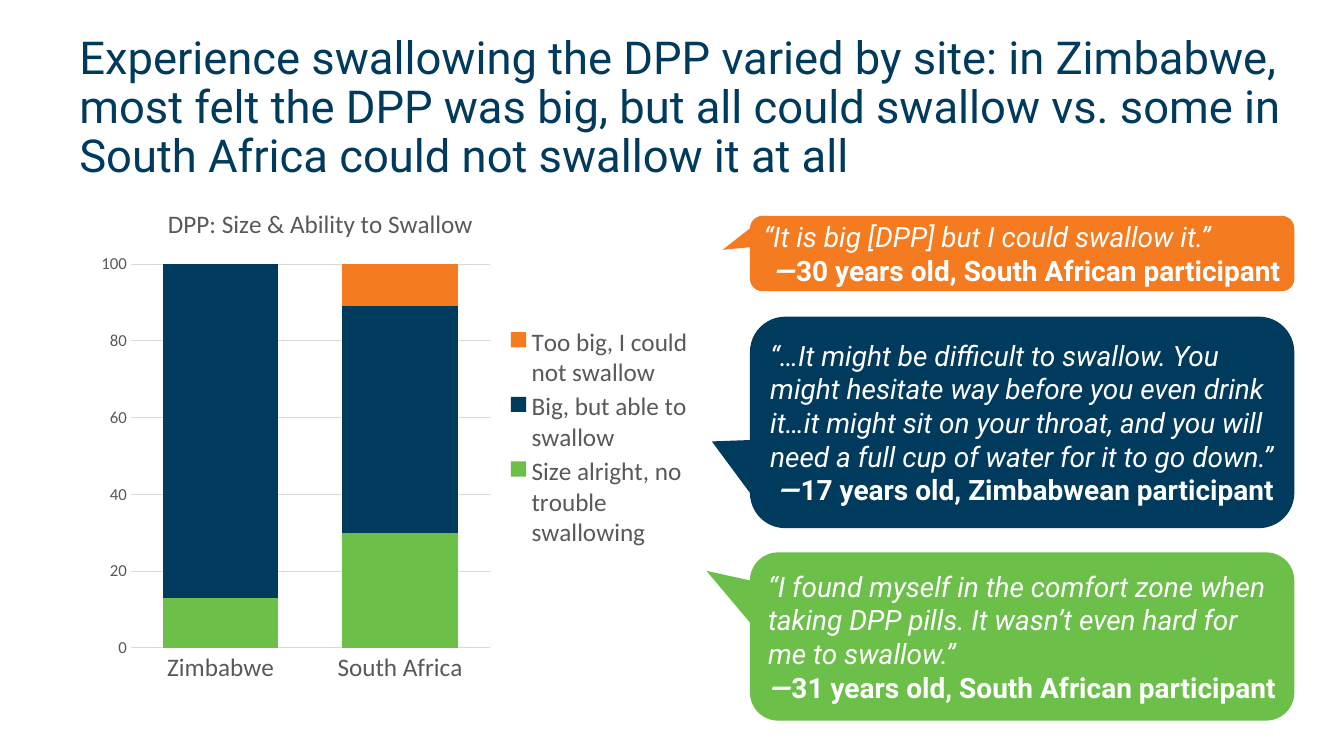
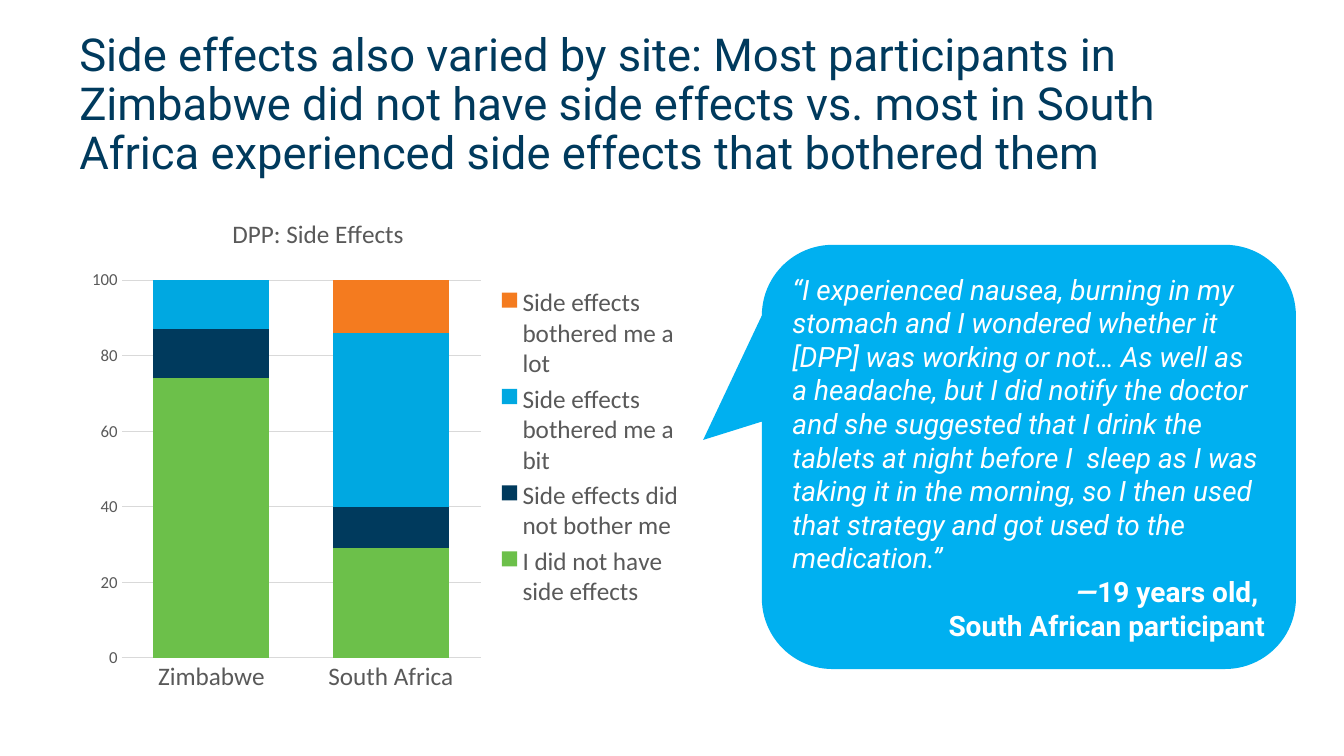
from lxml import etree
from pptx import Presentation
from pptx.chart.data import CategoryChartData
from pptx.dml.color import RGBColor
from pptx.enum.chart import XL_CHART_TYPE, XL_LEGEND_POSITION, XL_TICK_MARK
from pptx.enum.shapes import MSO_SHAPE
from pptx.enum.text import MSO_ANCHOR, PP_ALIGN
from pptx.oxml.ns import qn
from pptx.util import Cm, Pt

STACKED = XL_CHART_TYPE.COLUMN_STACKED
RIGHT = XL_LEGEND_POSITION.RIGHT
NO_TICK = XL_TICK_MARK.NONE
CALLOUT = MSO_SHAPE.ROUNDED_RECTANGULAR_CALLOUT
MIDDLE = MSO_ANCHOR.MIDDLE

# Shared look
NAVY, ORANGE, GREEN = "003A5D", "F47B1F", "6CC04A"
BLUE, SKY, WHITE = "00A8E1", "00B0F0", "FFFFFF"
GRAY, RULE = "595959", "D9D9D9"
HEAD = {"name": "Roboto", "size": Pt(32.4), "color": NAVY}
QUOTE = {"name": "Roboto", "size": Pt(20), "color": WHITE, "italic": True}
DASH = {**QUOTE, "bold": True}
SOURCE = {**DASH, "italic": False}
LABEL = {"name": "Calibri", "size": Pt(18), "color": GRAY, "bold": False}
SCALE = {**LABEL, "size": Pt(12)}
SITES = ["Zimbabwe", "South Africa"]
CHART_SIZE = (15.47, 12.78)

# Content: boxes in cm, chart parts as fractions of the chart
SLIDES = [
    {
        "title": "Experience swallowing the DPP varied by site: in Zimbabwe, "
                 "most felt the DPP was big, but all could swallow vs. some in "
                 "South Africa could not swallow it at all",
        "box": (1.75, 0.76, 30.86, 3.94),
        "chart": "DPP: Size & Ability to Swallow",
        "at": (2.26, 4.7),
        "parts": {"title": (0.12, 0.03),
                  "plotArea": (0.067, 0.153, 0.585, 0.757),
                  "legend": (0.68, 0.27, 0.3, 0.45)},
        "series": [
            ("Size alright, no trouble swallowing", (13, 30), GREEN),
            ("Big, but able to swallow", (87, 59), NAVY),
            ("Too big, I could not swallow", (0, 11), ORANGE),
        ],
        "quotes": [
            ("“…It might be difficult to swallow. You might hesitate way "
             "before you even drink it…it might sit on your throat, and you "
             "will need a full cup of water for it to go down.”",
             ["17 years old, Zimbabwean participant"],
             (18.9, 7.98, 13.72, 5.33), (-0.57, 0.09), NAVY),
            ("“It is big [DPP] but I could swallow it.”",
             ["30 years old, South African participant"],
             (18.9, 5.44, 13.72, 1.9), (-0.55, -0.05), ORANGE),
            ("“I found myself in the comfort zone when taking DPP pills. "
             "It wasn’t even hard for me to swallow.”",
             ["31 years old, South African participant"],
             (18.9, 13.92, 13.72, 4.24), (-0.58, -0.39), GREEN),
        ],
    },
    {
        "title": "Side effects also varied by site: Most participants in "
                 "Zimbabwe did not have side effects vs. most in South Africa "
                 "experienced side effects that bothered them",
        "box": (1.75, 0.69, 29.95, 3.94),
        "chart": "DPP: Side Effects",
        "at": (2.03, 4.95),
        "parts": {"title": (0.24, 0.03),
                  "plotArea": (0.067, 0.165, 0.585, 0.745),
                  "legend": (0.68, 0.17, 0.3, 0.65)},
        "series": [
            ("I did not have side effects", (74, 29), GREEN),
            ("Side effects did not bother me", (13, 11), NAVY),
            ("Side effects bothered me a bit", (13, 46), BLUE),
            ("Side effects bothered me a lot", (0, 14), ORANGE),
        ],
        "quotes": [
            ("“I experienced nausea, burning in my stomach and I wondered "
             "whether it [DPP] was working or not… As well as a headache, but "
             "I did notify the doctor and she suggested that I drink the "
             "tablets at night before I  sleep as I was taking it in the "
             "morning, so I then used that strategy and got used to the "
             "medication.”",
             ["19 years old, ", "South African participant"],
             (19.2, 6.17, 13.46, 10.69), (-0.61, -0.04), SKY),
        ],
    },
]


def rgb(code):
    return RGBColor.from_string(code)


def style(font, look):
    for key, val in look.items():
        if key == "color":
            font.color.rgb = rgb(val)
        else:
            setattr(font, key, val)


def write(para, text, look):
    run = para.add_run()
    run.text = text
    style(run.font, look)


def paint(shape, color):
    shape.fill.solid()
    shape.fill.fore_color.rgb = rgb(color)


def rule(line):
    line.color.rgb = rgb(RULE)
    line.width = Pt(0.75)


def place(chart, part, spot):
    """Fix the place of one part inside the chart."""
    node = next(chart._chartSpace.iter(qn("c:" + part)))
    for old in node.findall(qn("c:layout")):
        node.remove(old)
    lay = etree.Element(qn("c:layout"))
    man = etree.SubElement(lay, qn("c:manualLayout"))
    vals = [("xMode", "edge"), ("yMode", "edge"), *zip("xywh", spot)]
    if part == "plotArea":
        vals.insert(0, ("layoutTarget", "inner"))
    for tag, val in vals:
        etree.SubElement(man, qn("c:" + tag)).set("val", str(val))
    node.insert(0 if part == "plotArea" else 1, lay)


def add_title(slide, text, box):
    frame = slide.shapes.add_textbox(*map(Cm, box)).text_frame
    frame.word_wrap = True
    frame.vertical_anchor = MIDDLE
    para = frame.paragraphs[0]
    para.line_spacing = 0.9
    write(para, text, HEAD)


def add_bars(slide, item):
    data = CategoryChartData()
    data.categories = SITES
    for name, vals, _ in item["series"]:
        data.add_series(name, vals)
    box = map(Cm, item["at"] + CHART_SIZE)
    chart = slide.shapes.add_chart(STACKED, *box, data).chart
    style(chart.font, {"name": "Calibri", "size": Pt(10)})

    # Bars
    plot = chart.plots[0]
    plot.gap_width, plot.overlap = 55, 100
    plot.vary_by_categories = False
    for bar, (_, _, color) in zip(plot.series, item["series"]):
        paint(bar.format, color)

    # Axes
    cat, val = chart.category_axis, chart.value_axis
    for axis, look in ((cat, LABEL), (val, SCALE)):
        axis.major_tick_mark = axis.minor_tick_mark = NO_TICK
        style(axis.tick_labels.font, look)
    rule(cat.format.line)
    val.format.line.fill.background()
    val.minimum_scale, val.maximum_scale, val.major_unit = 0, 100, 20
    rule(val.major_gridlines.format.line)

    # Title and legend
    write(chart.chart_title.text_frame.paragraphs[0], item["chart"], LABEL)
    chart.chart_title.include_in_layout = False
    chart.has_legend = True
    chart.legend.position = RIGHT
    chart.legend.include_in_layout = False
    style(chart.legend.font, LABEL)
    for part, spot in item["parts"].items():
        place(chart, part, spot)


def add_quote(slide, text, source, box, tip, color):
    shape = slide.shapes.add_shape(CALLOUT, *map(Cm, box))
    shape.shadow.inherit = False
    paint(shape, color)
    shape.line.fill.background()
    for i, val in enumerate((*tip, 0.167)):
        shape.adjustments[i] = val
    frame = shape.text_frame
    frame.word_wrap = True
    frame.vertical_anchor = MIDDLE
    para = frame.paragraphs[0]
    para.alignment = PP_ALIGN.LEFT
    write(para, text, QUOTE)
    para = frame.add_paragraph()
    para.alignment = PP_ALIGN.RIGHT
    write(para, "—", DASH)
    for i, line in enumerate(source):
        if i:
            para.add_line_break()
        write(para, line, SOURCE)


def main():
    deck = Presentation()
    deck.slide_width, deck.slide_height = Cm(33.87), Cm(19.05)
    for item in SLIDES:
        slide = deck.slides.add_slide(deck.slide_layouts[6])
        add_title(slide, item["title"], item["box"])
        add_bars(slide, item)
        for quote in item["quotes"]:
            add_quote(slide, *quote)
    deck.save("out.pptx")


if __name__ == "__main__":
    main()
